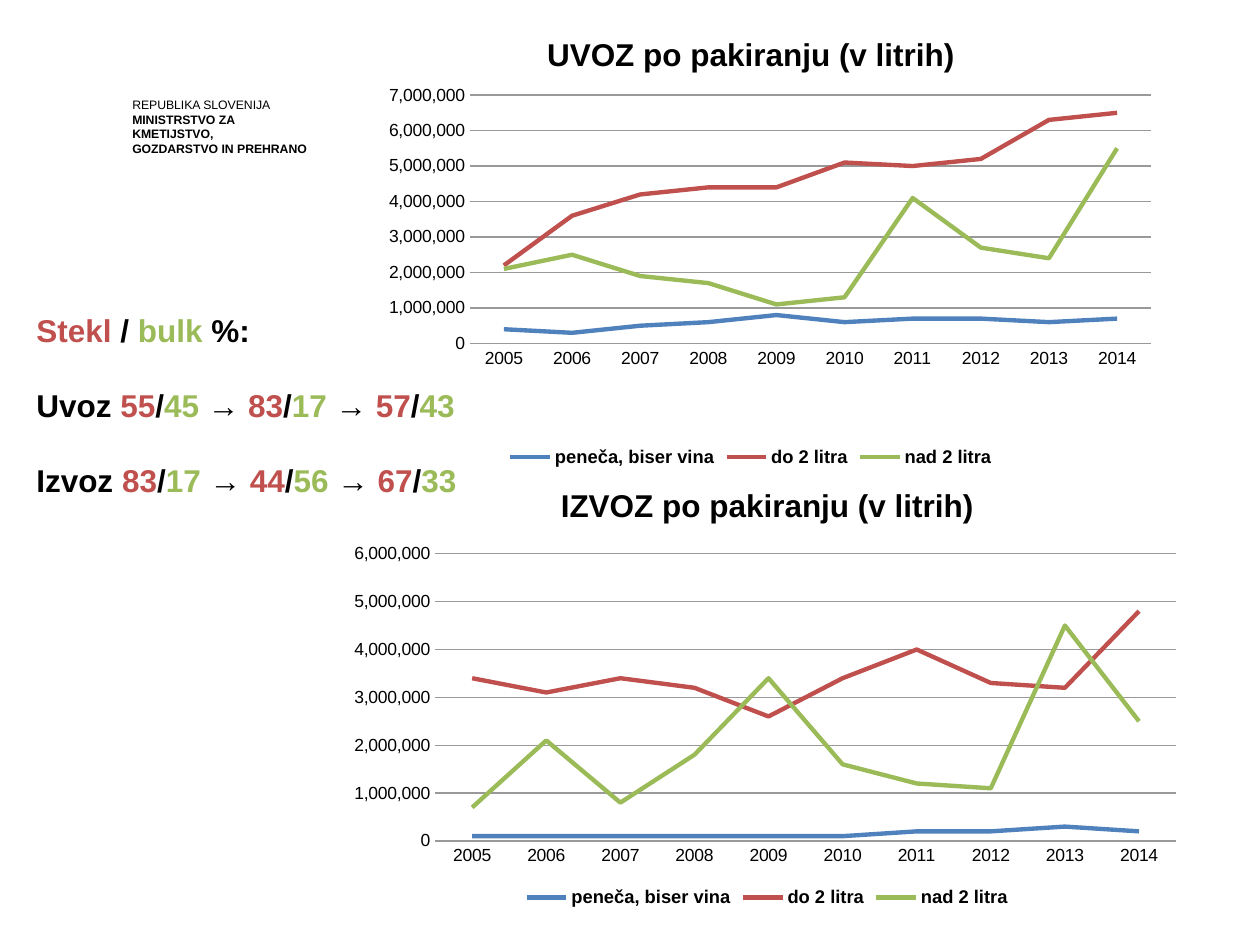
from dataclasses import dataclass
from pptx import Presentation
from pptx.chart.data import CategoryChartData
from pptx.dml.color import RGBColor
from pptx.enum.chart import XL_CHART_TYPE, XL_LEGEND_POSITION, XL_TICK_MARK
from pptx.enum.text import MSO_AUTO_SIZE
from pptx.oxml import parse_xml
from pptx.oxml.ns import nsdecls
from pptx.util import Inches, Pt

LINE = XL_CHART_TYPE.LINE
BOTTOM = XL_LEGEND_POSITION.BOTTOM
NO_TICK = XL_TICK_MARK.NONE
NO_FIT = MSO_AUTO_SIZE.NONE


@dataclass(frozen=True)
class Theme:
    font: str = "Arial"
    ink: RGBColor = RGBColor(0x00, 0x00, 0x00)
    grid: RGBColor = RGBColor(0x99, 0x99, 0x99)
    sparkling: RGBColor = RGBColor(0x4F, 0x81, 0xBD)
    bottled: RGBColor = RGBColor(0xC0, 0x50, 0x4D)
    bulk: RGBColor = RGBColor(0x9B, 0xBB, 0x59)
    title: float = 18
    legend: float = 10.5
    axis: float = 10
    ministry: float = 7


T = Theme()
YEARS = [str(year) for year in range(2005, 2015)]
SERIES = [("peneča, biser vina", T.sparkling),
          ("do 2 litra", T.bottled),
          ("nad 2 litra", T.bulk)]
IMPORTS = [[0.4, 0.3, 0.5, 0.6, 0.8, 0.6, 0.7, 0.7, 0.6, 0.7],
           [2.2, 3.6, 4.2, 4.4, 4.4, 5.1, 5.0, 5.2, 6.3, 6.5],
           [2.1, 2.5, 1.9, 1.7, 1.1, 1.3, 4.1, 2.7, 2.4, 5.5]]
EXPORTS = [[0.1, 0.1, 0.1, 0.1, 0.1, 0.1, 0.2, 0.2, 0.3, 0.2],
           [3.4, 3.1, 3.4, 3.2, 2.6, 3.4, 4.0, 3.3, 3.2, 4.8],
           [0.7, 2.1, 0.8, 1.8, 3.4, 1.6, 1.2, 1.1, 4.5, 2.5]]


def style(font, size, color=T.ink, bold=False):
    font.name, font.size, font.bold = T.font, Pt(size), bold
    font.color.rgb = color


def add_text_box(s, box, wrap):
    tf = s.shapes.add_textbox(*box).text_frame
    tf.word_wrap = wrap
    tf.auto_size = NO_FIT
    return tf


def next_paragraph(tf, index):
    return tf.add_paragraph() if index else tf.paragraphs[0]


def add_ministry(s, box):
    tf = add_text_box(s, box, True)
    tf.margin_left = tf.margin_right = tf.margin_top = tf.margin_bottom = 0
    lines = ["REPUBLIKA SLOVENIJA", "MINISTRSTVO ZA KMETIJSTVO,",
             "GOZDARSTVO IN PREHRANO"]
    for i, line in enumerate(lines):
        p = next_paragraph(tf, i)
        p.text = line
        p.line_spacing = Pt(8.4)
        style(p.runs[0].font, T.ministry, bold=i > 0)


def ratio_runs(label, ratios):
    runs = [(label + " ", T.ink)]
    for i, (bottled, bulk) in enumerate(ratios):
        if i:
            runs.append((" → ", T.ink))
        runs += [(bottled, T.bottled), ("/", T.ink), (bulk, T.bulk)]
    return runs


def add_ratios(s, box):
    tf = add_text_box(s, box, False)
    rows = [
        [("Stekl", T.bottled), (" / ", T.ink), ("bulk", T.bulk), (" %:", T.ink)],
        ratio_runs("Uvoz", [("55", "45"), ("83", "17"), ("57", "43")]),
        ratio_runs("Izvoz", [("83", "17"), ("44", "56"), ("67", "33")]),
    ]
    for i, row in enumerate(rows):
        p = next_paragraph(tf, i)
        if i:
            p.space_before = Pt(21)
        for text, color in row:
            r = p.add_run()
            r.text = text
            style(r.font, T.title, color, True)


def set_plot_area(chart, shares):
    x, y, w, h = shares
    layout = parse_xml(
        f'<c:layout {nsdecls("c")}><c:manualLayout>'
        '<c:layoutTarget val="inner"/><c:xMode val="edge"/><c:yMode val="edge"/>'
        f'<c:x val="{x}"/><c:y val="{y}"/><c:w val="{w}"/><c:h val="{h}"/>'
        '</c:manualLayout></c:layout>')
    plot_area = chart.plots[0]._element.getparent()
    for old in plot_area.findall(layout.tag):
        plot_area.remove(old)
    plot_area.insert(0, layout)


def add_volume_chart(s, box, title, millions, top, plot_shares):
    data = CategoryChartData(number_format="#,##0")
    data.categories = YEARS
    for (name, _), values in zip(SERIES, millions):
        data.add_series(name, [round(v * 1_000_000) for v in values])
    chart = s.shapes.add_chart(LINE, *box, data).chart
    style(chart.font, T.axis)

    chart.has_title = True
    tf = chart.chart_title.text_frame
    tf.text = title
    style(tf.paragraphs[0].runs[0].font, T.title, bold=True)
    chart.chart_title.include_in_layout = False

    chart.has_legend = True
    chart.legend.position = BOTTOM
    chart.legend.include_in_layout = False
    style(chart.legend.font, T.legend, bold=True)

    for axis in (chart.category_axis, chart.value_axis):
        axis.major_tick_mark = axis.minor_tick_mark = NO_TICK
        style(axis.tick_labels.font, T.axis)
    chart.category_axis.format.line.color.rgb = T.grid
    values = chart.value_axis
    values.minimum_scale, values.maximum_scale = 0, top
    values.major_unit = 1_000_000
    values.tick_labels.number_format = "#,##0"
    values.tick_labels.number_format_is_linked = False
    values.format.line.fill.background()
    values.major_gridlines.format.line.color.rgb = T.grid

    plot = chart.plots[0]
    plot.vary_by_categories = False
    for series, (_, color) in zip(plot.series, SERIES):
        series.smooth = False
        series.format.line.color.rgb = color
        series.format.line.width = Pt(2.5)
    set_plot_area(chart, plot_shares)


def main():
    prs = Presentation()
    prs.slide_width, prs.slide_height = Inches(10), Inches(7.5)
    s = prs.slides.add_slide(prs.slide_layouts[6])

    def area(x, y, w, h):
        return [round(share * side) for share, side in zip(
            (x, y, w, h), (prs.slide_width, prs.slide_height) * 2)]

    add_ministry(s, area(0.105, 0.103, 0.147, 0.045))
    add_volume_chart(s, area(0.258, 0.013, 0.676, 0.487),
                     "UVOZ po pakiranju (v litrih)", IMPORTS, 7_000_000,
                     (0.17, 0.18, 0.8, 0.54))
    add_volume_chart(s, area(0.271, 0.491, 0.676, 0.475),
                     "IZVOZ po pakiranju (v litrih)", EXPORTS, 6_000_000,
                     (0.11, 0.2, 0.87, 0.64))
    add_ratios(s, area(0.019, 0.323, 0.356, 0.216))
    prs.save("out.pptx")


if __name__ == "__main__":
    main()
